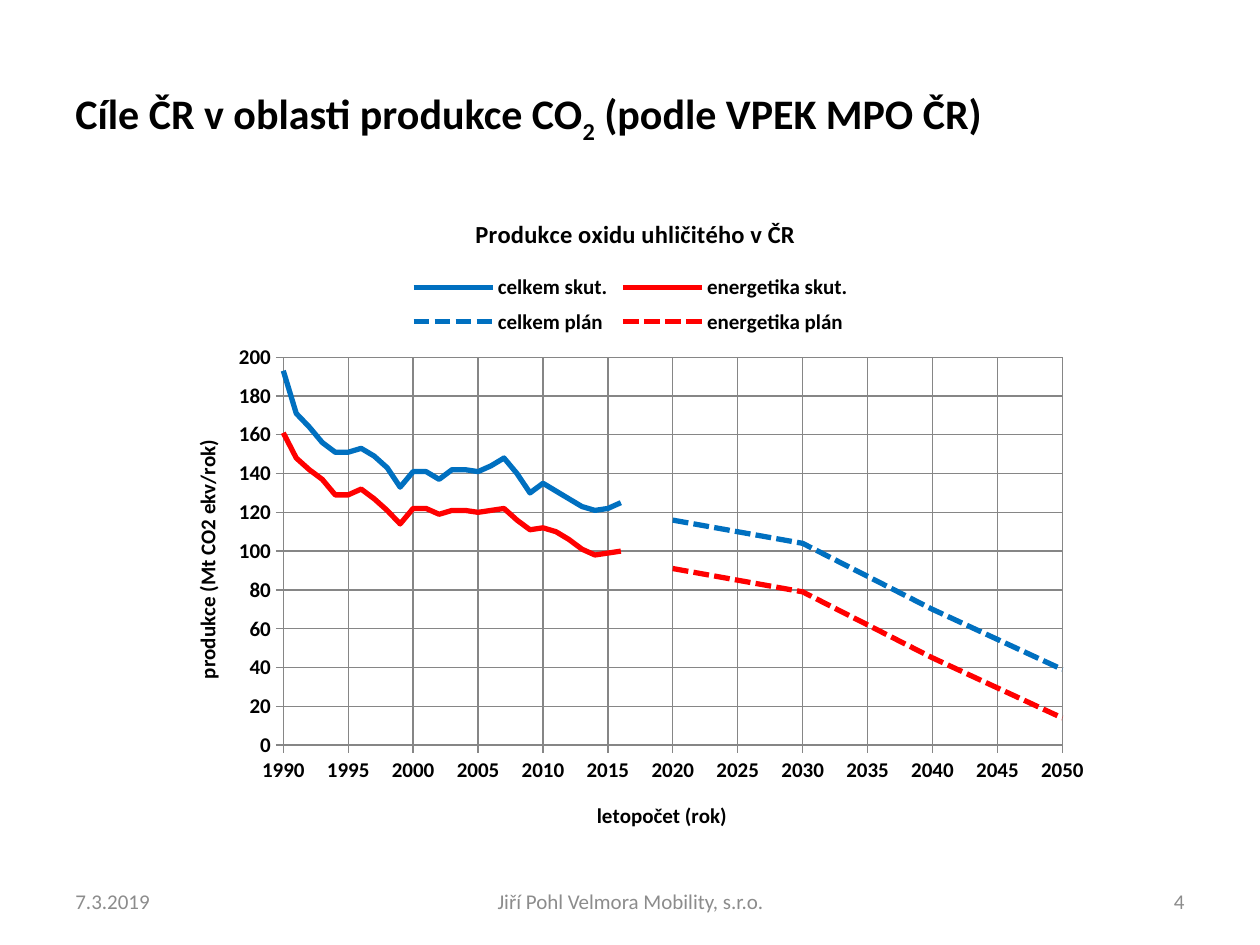
from lxml import etree
from pptx import Presentation
from pptx.chart.data import XyChartData
from pptx.dml.color import RGBColor
from pptx.enum.chart import XL_CHART_TYPE, XL_LEGEND_POSITION, XL_TICK_MARK
from pptx.enum.dml import MSO_LINE
from pptx.enum.text import MSO_ANCHOR, PP_ALIGN
from pptx.oxml.ns import qn
from pptx.util import Inches, Pt

LEFT, CENTER, RIGHT = PP_ALIGN.LEFT, PP_ALIGN.CENTER, PP_ALIGN.RIGHT
MIDDLE = MSO_ANCHOR.MIDDLE
LINES = XL_CHART_TYPE.XY_SCATTER_LINES_NO_MARKERS
LEGEND_TOP = XL_LEGEND_POSITION.TOP
TICK_OUT = XL_TICK_MARK.OUTSIDE
SOLID, DASHED = MSO_LINE.SOLID, MSO_LINE.SQUARE_DOT

BLACK = RGBColor(0x00, 0x00, 0x00)
GRAY = RGBColor(0x8C, 0x8C, 0x8C)
GRID = RGBColor(0x86, 0x86, 0x86)
BLUE = RGBColor(0x00, 0x70, 0xC0)
RED = RGBColor(0xFF, 0x00, 0x00)

# Emissions in Mt of CO2 equivalent per year
ACTUAL_YEARS = range(1990, 2017)
PLAN_YEARS = range(2020, 2051, 10)
SERIES = [
    ("celkem skut.", BLUE, SOLID, ACTUAL_YEARS,
     [193, 171, 164, 156, 151, 151, 153, 149, 143, 133, 141, 141, 137, 142,
      142, 141, 144, 148, 140, 130, 135, 131, 127, 123, 121, 122, 125]),
    ("energetika skut.", RED, SOLID, ACTUAL_YEARS,
     [161, 148, 142, 137, 129, 129, 132, 127, 121, 114, 122, 122, 119, 121,
      121, 120, 121, 122, 116, 111, 112, 110, 106, 101, 98, 99, 100]),
    ("celkem plán", BLUE, DASHED, PLAN_YEARS, [116, 104, 70, 39]),
    ("energetika plán", RED, DASHED, PLAN_YEARS, [91, 79, 45, 14]),
]


def add_run(p, text, size=12, color=BLACK, bold=False, font="Calibri", baseline=0):
    r = p.add_run()
    r.text = text
    r.font.name, r.font.size, r.font.bold = font, Pt(size), bold
    r.font.color.rgb = color
    if baseline:
        r.font._element.set("baseline", str(baseline * 1000))


def set_layout(element, x, y, w=None, h=None, inner=False):
    """Place a chart part by fractions of the chart area."""
    old = element.find(qn("c:layout"))
    if old is not None:
        element.remove(old)
    layout = etree.Element(qn("c:layout"))
    manual = etree.SubElement(layout, qn("c:manualLayout"))
    values = [("layoutTarget", "inner" if inner else None),
              ("xMode", "edge"), ("yMode", "edge"),
              ("x", x), ("y", y), ("w", w), ("h", h)]
    for tag, value in values:
        if value is not None:
            etree.SubElement(manual, qn("c:" + tag)).set("val", str(value))
    before = [e for e in element if e.tag in (qn("c:tx"), qn("c:legendPos"))]
    element.insert(element.index(before[0]) + 1 if before else 0, layout)


class SlideBuilder:
    def __init__(self, slide, font="Calibri"):
        self.s = slide
        self.font = font

    def text(self, x, y, w, h, runs, align=LEFT, **style):
        sp = self.s.shapes.add_textbox(Inches(x), Inches(y), Inches(w), Inches(h))
        tf = sp.text_frame
        tf.word_wrap = True
        tf.vertical_anchor = MIDDLE
        p = tf.paragraphs[0]
        p.alignment = align
        for text, baseline in runs:
            add_run(p, text, font=self.font, baseline=baseline, **style)

    def chart_title(self, title, text, x, y, size=12):
        p = title.text_frame.paragraphs[0]
        add_run(p, text, size=size, bold=True, font=self.font)
        set_layout(title._element, x, y)

    def axis(self, axis, low, high, step):
        axis.minimum_scale, axis.maximum_scale, axis.major_unit = low, high, step
        axis.major_tick_mark = TICK_OUT
        axis.has_major_gridlines = True
        for line in (axis.format.line, axis.major_gridlines.format.line):
            line.color.rgb = GRID
            line.width = Pt(0.75)
        axis.tick_labels.number_format = "General"
        axis.tick_labels.number_format_is_linked = False

    def scatter(self, x, y, w, h, series):
        data = XyChartData()
        for name, _, _, years, values in series:
            points = data.add_series(name)
            for year, value in zip(years, values):
                points.add_data_point(year, value)
        chart = self.s.shapes.add_chart(
            LINES, Inches(x), Inches(y), Inches(w), Inches(h), data).chart
        chart.font.name, chart.font.size, chart.font.bold = self.font, Pt(12), True
        chart.font.color.rgb = BLACK
        plot = chart.plots[0]
        plot.vary_by_categories = False
        for line_series, (_, color, dash, _, _) in zip(plot.series, series):
            line_series.smooth = False
            line = line_series.format.line
            line.color.rgb, line.width, line.dash_style = color, Pt(3), dash
        return chart


def main():
    prs = Presentation()
    prs.slide_width, prs.slide_height = Inches(10), Inches(7.5)
    page = SlideBuilder(prs.slides.add_slide(prs.slide_layouts[6]))

    # Title
    page.text(0.5, 0.3, 9, 1.25,
              [("Cíle ČR v oblasti produkce CO", 0), ("2", -25),
               (" (podle VPEK MPO ČR)", 0)], size=24, bold=True)

    # Chart
    chart = page.scatter(1.28, 1.53, 7.45, 5.22, SERIES)
    years, output = chart.category_axis, chart.value_axis
    page.axis(years, 1990, 2050, 5)
    page.axis(output, 0, 200, 20)
    chart.has_title = True
    page.chart_title(chart.chart_title, "Produkce oxidu uhličitého v ČR", 0.33, 0.03, 14)
    page.chart_title(years.axis_title, "letopočet (rok)", 0.46, 0.92)
    page.chart_title(output.axis_title, "produkce (Mt CO2 ekv/rok)", 0.03, 0.37)
    output.axis_title.text_frame._txBody.bodyPr.set("rot", "-5400000")
    chart.has_legend = True
    chart.legend.position = LEGEND_TOP
    chart.legend.include_in_layout = False
    set_layout(chart.legend._element, 0.26, 0.11, 0.48, 0.12)
    plot_area = chart._chartSpace.chart.plotArea
    set_layout(plot_area, 0.13, 0.25, 0.83, 0.59, inner=True)

    # Footer
    footer = [(0.5, 2.33, "7.3.2019", LEFT),
              (3.42, 3.17, "Jiří Pohl Velmora Mobility, s.r.o.", CENTER),
              (7.17, 2.33, "4", RIGHT)]
    for x, w, text, align in footer:
        page.text(x, 6.95, w, 0.4, [(text, 0)], align, color=GRAY)

    prs.save("out.pptx")


if __name__ == "__main__":
    main()
